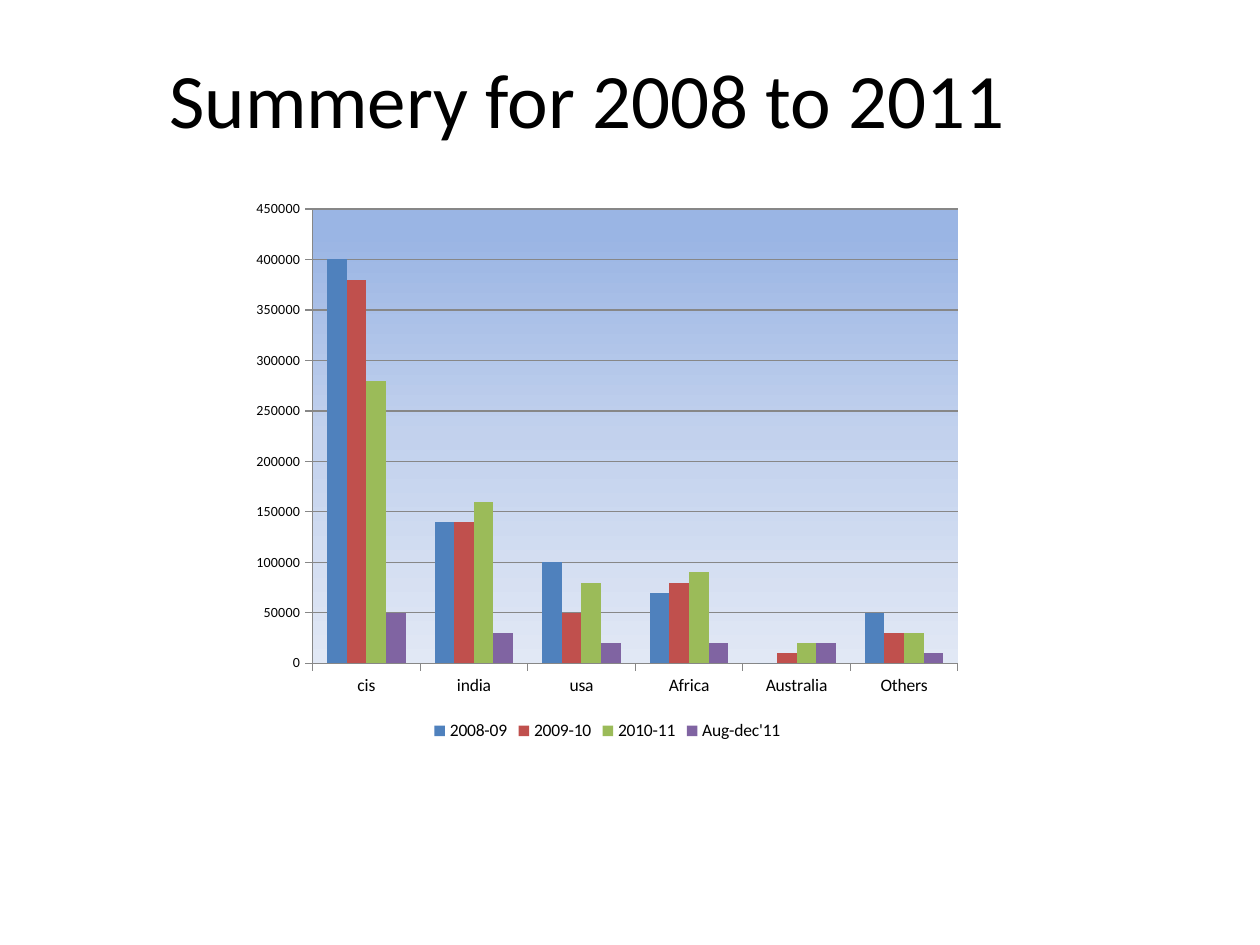
from lxml import etree
from pptx import Presentation
from pptx.chart.data import CategoryChartData
from pptx.dml.color import RGBColor
from pptx.enum.chart import XL_CHART_TYPE, XL_LEGEND_POSITION, XL_TICK_MARK
from pptx.enum.text import MSO_ANCHOR, PP_ALIGN
from pptx.oxml.ns import qn
from pptx.util import Inches, Pt

COLUMNS = XL_CHART_TYPE.COLUMN_CLUSTERED
BOTTOM = XL_LEGEND_POSITION.BOTTOM
OUTSIDE = XL_TICK_MARK.OUTSIDE
MIDDLE = MSO_ANCHOR.MIDDLE
CENTER = PP_ALIGN.CENTER

FONT = "Calibri"
BLACK = "000000"
LINE_GRAY = "878787"
TITLE_ONLY = 5
WIDTH, HEIGHT = 10, 7.5

# Boxes as left, top, width, height in inches
TITLE_BOX = (0.25, 0, 8.83, 1.55)
CHART_BOX = (1.92, 1.5, 5.8, 4.42)

# Plot area as percentages of the chart
PLOT_PERCENT = {"x": 9.68, "y": 3.6, "w": 88.3, "h": 81.6}
PLOT_GRADIENT = [(5, "9AB5E4"), (50, "C2D1ED"), (100, "E1E8F5")]

REGIONS = ["cis", "india", "usa", "Africa", "Australia", "Others"]
YEARS = [
    ("2008-09", "4F81BD", [400000, 140000, 100000, 70000, 0, 50000]),
    ("2009-10", "C0504D", [380000, 140000, 50000, 80000, 10000, 30000]),
    ("2010-11", "9BBB59", [280000, 160000, 80000, 90000, 20000, 30000]),
    ("Aug-dec'11", "8064A2", [50000, 30000, 20000, 20000, 20000, 10000]),
]


def color(value):
    return RGBColor.from_string(value)


def format_font(font, size):
    font.name = FONT
    font.size = Pt(size)
    font.color.rgb = color(BLACK)


def format_line(line):
    line.color.rgb = color(LINE_GRAY)
    line.width = Pt(0.75)


def add_element(parent, tag, **attributes):
    return etree.SubElement(parent, qn(tag), attributes)


def place_title(slide, box):
    title = slide.shapes.title
    title.left, title.top, title.width, title.height = map(Inches, box)
    frame = title.text_frame
    frame.text = "Summery for 2008 to 2011"
    frame.vertical_anchor = MIDDLE
    paragraph = frame.paragraphs[0]
    paragraph.alignment = CENTER
    format_font(paragraph.runs[0].font, 44)


def format_axis(axis, size):
    axis.major_tick_mark = OUTSIDE
    format_font(axis.tick_labels.font, size)
    format_line(axis.format.line)


def format_plot_area(chart):
    plot_area = chart.element.find(".//" + qn("c:plotArea"))

    # Fixed inner plot position
    layout = plot_area.find(qn("c:layout"))
    if layout is not None:
        plot_area.remove(layout)
    layout = etree.Element(qn("c:layout"))
    plot_area.insert(0, layout)
    manual = add_element(layout, "c:manualLayout")
    add_element(manual, "c:layoutTarget", val="inner")
    for side in "xy":
        add_element(manual, f"c:{side}Mode", val="edge")
    for side, percent in PLOT_PERCENT.items():
        add_element(manual, f"c:{side}", val=str(percent / 100))

    # Vertical gradient
    properties = add_element(plot_area, "c:spPr")
    gradient = add_element(properties, "a:gradFill")
    stops = add_element(gradient, "a:gsLst")
    for percent, value in PLOT_GRADIENT:
        stop = add_element(stops, "a:gs", pos=str(percent * 1000))
        add_element(stop, "a:srgbClr", val=value)
    add_element(gradient, "a:lin", ang=str(90 * 60000), scaled="0")


def place_chart(slide, box):
    data = CategoryChartData()
    data.categories = REGIONS
    for name, _, values in YEARS:
        data.add_series(name, values)
    chart = slide.shapes.add_chart(COLUMNS, *map(Inches, box), data).chart
    format_font(chart.font, 10)
    chart.has_title = False

    # Columns
    plot = chart.plots[0]
    plot.gap_width = 150
    plot.overlap = 0
    plot.vary_by_categories = False
    for series, (_, fill, _) in zip(plot.series, YEARS):
        series.format.fill.solid()
        series.format.fill.fore_color.rgb = color(fill)

    # Axes and gridlines
    format_axis(chart.category_axis, 10)
    value_axis = chart.value_axis
    format_axis(value_axis, 8)
    value_axis.minimum_scale = 0
    value_axis.maximum_scale = 450000
    value_axis.major_unit = 50000
    value_axis.has_major_gridlines = True
    format_line(value_axis.major_gridlines.format.line)

    # Legend
    chart.has_legend = True
    chart.legend.position = BOTTOM
    chart.legend.include_in_layout = False
    format_font(chart.legend.font, 10)

    format_plot_area(chart)


def main():
    presentation = Presentation()
    presentation.slide_width = Inches(WIDTH)
    presentation.slide_height = Inches(HEIGHT)
    slide = presentation.slides.add_slide(presentation.slide_layouts[TITLE_ONLY])
    place_title(slide, TITLE_BOX)
    place_chart(slide, CHART_BOX)
    presentation.save("out.pptx")


if __name__ == "__main__":
    main()
